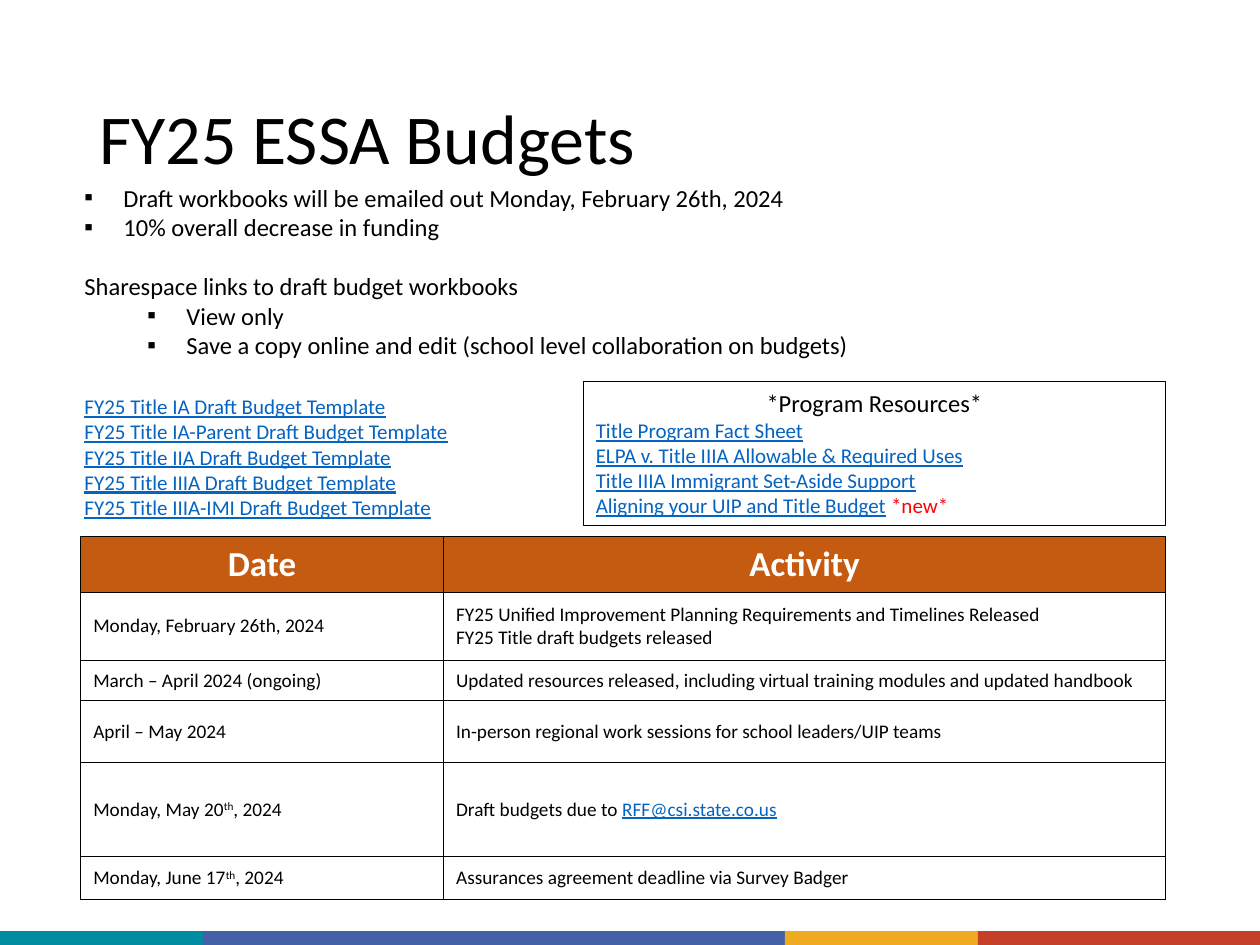
import pptx
import pptx.util
import pptx.dml.color
import pptx.enum.shapes
import pptx.enum.text
import pptx.oxml
import pptx.oxml.ns

Inches, Pt = pptx.util.Inches, pptx.util.Pt
RGB = pptx.dml.color.RGBColor
ALIGN = pptx.enum.text.PP_ALIGN
ANCHOR = pptx.enum.text.MSO_ANCHOR
RECT = pptx.enum.shapes.MSO_SHAPE.RECTANGLE

COLORS = {"text": "000000", "white": "FFFFFF", "link": "0563C1", "new": "FF0000",
          "header": "C55A11", "teal": "008CA0", "indigo": "455FA9",
          "amber": "EFAA1F", "red": "C63F28"}
FONT = "Calibri"

TITLE = "FY25 ESSA Budgets"
# (text, bullet indent in inches or None, space before in points)
NOTES = [
    ("Draft workbooks will be emailed out Monday, February 26th, 2024", 0.31, 0),
    ("10% overall decrease in funding", 0.31, 0),
    ("Sharespace links to draft budget workbooks", None, 17),
    ("View only", 0.81, 0),
    ("Save a copy online and edit (school level collaboration on budgets)", 0.81, 0),
]
TEMPLATES = [f"FY25 Title {name} Draft Budget Template"
             for name in ("IA", "IA-Parent", "IIA", "IIIA", "IIIA-IMI")]
RESOURCES_TITLE = "*Program Resources*"
# A paragraph is a list of (text, style) runs
RESOURCES = [
    [("Title Program Fact Sheet", "link")],
    [("ELPA v. Title IIIA Allowable & Required Uses", "link")],
    [("Title IIIA Immigrant Set-Aside Support", "link")],
    [("Aligning your UIP and Title Budget", "link"), (" ", "text"), ("*new*", "new")],
]
HEADERS = ["Date", "Activity"]
# Each cell is a list of paragraphs
SCHEDULE = [
    ([[("Monday, February 26th, 2024", "text")]],
     [[("FY25 Unified Improvement Planning Requirements and Timelines Released", "text")],
      [("FY25 Title draft budgets released", "text")]]),
    ([[("March – April 2024 (ongoing)", "text")]],
     [[("Updated resources released, including virtual training modules "
        "and updated handbook", "text")]]),
    ([[("April – May 2024", "text")]],
     [[("In-person regional work sessions for school leaders/UIP teams", "text")]]),
    ([[("Monday, May 20", "text"), ("th", "super"), (", 2024", "text")]],
     [[("Draft budgets due to ", "text"), ("RFF@csi.state.co.us", "link")]]),
    ([[("Monday, June 17", "text"), ("th", "super"), (", 2024", "text")]],
     [[("Assurances agreement deadline via Survey Badger", "text")]]),
]
COL_WIDTHS = [2.88, 5.73]
ROW_HEIGHTS = [0.44, 0.54, 0.32, 0.49, 0.75, 0.34]
FOOTER = [("teal", 1.61), ("indigo", 4.62), ("amber", 1.53), ("red", 2.24)]


def place(s, left, top, width, height):
    s.left, s.top, s.width, s.height = map(Inches, (left, top, width, height))


def add_run(p, text, size, style="text", bold=False):
    r = p.add_run()
    r.text = text
    r.font.name, r.font.size, r.font.bold = FONT, Pt(size), bold
    r.font.color.rgb = RGB.from_string(COLORS.get(style, COLORS["text"]))
    if style == "link":
        r.font.underline = True
    if style == "super":
        r._r.get_or_add_rPr().set("baseline", "30000")


def add_paragraph(tf, runs, size, align=ALIGN.LEFT, bold=False):
    """Fill the empty first paragraph, or add one after it."""
    p = tf.paragraphs[0]
    if p.runs:
        p = tf.add_paragraph()
    p.alignment = align
    for text, style in runs:
        add_run(p, text, size, style, bold)
    return p


def format_list(p, indent, before):
    p.line_spacing, p.space_before, p.space_after = 1.0, Pt(before), Pt(0)
    pPr = p._p.get_or_add_pPr()
    pPr.set("marL", str(Inches(indent or 0)))
    pPr.set("indent", str(-Inches(0.31) if indent else 0))
    bullet = ([f'<a:buFont {{}} typeface="{FONT}"/>', '<a:buChar {} char="▪"/>']
              if indent else ["<a:buNone {}/>"])
    for xml in bullet:
        pPr.append(pptx.oxml.parse_xml(xml.format(pptx.oxml.ns.nsdecls("a"))))


def add_borders(cell):
    tcPr = cell._tc.get_or_add_tcPr()
    for side in "LRTB":
        tcPr.append(pptx.oxml.parse_xml(
            f'<a:ln{side} {pptx.oxml.ns.nsdecls("a")} w="12700"><a:solidFill>'
            f'<a:srgbClr val="{COLORS["text"]}"/></a:solidFill></a:ln{side}>'))


def add_rect(slide, left, top, width, height, fill=None):
    s = slide.shapes.add_shape(RECT, *map(Inches, (left, top, width, height)))
    s.shadow.inherit = False
    if fill:
        s.fill.solid()
        s.fill.fore_color.rgb = RGB.from_string(COLORS[fill])
        s.line.fill.background()
    else:
        s.fill.background()
        s.line.color.rgb = RGB.from_string(COLORS["text"])
        s.line.width = Pt(0.75)
    return s


def add_footer(slide):
    left = 0
    for color, width in FOOTER:
        add_rect(slide, left, 7.39, width, 0.11, color)
        left += width


def add_title(slide):
    s = slide.shapes.title
    place(s, 0.69, 0.4, 8.62, 1.45)
    tf = s.text_frame
    tf.auto_size = pptx.enum.text.MSO_AUTO_SIZE.NONE
    tf.vertical_anchor = ANCHOR.MIDDLE
    add_paragraph(tf, [(TITLE, "text")], 40).line_spacing = 0.9


def add_notes(slide):
    s = slide.placeholders[1]
    place(s, 0.57, 1.4, 8.76, 3.26)
    tf = s.text_frame
    tf.auto_size = pptx.enum.text.MSO_AUTO_SIZE.NONE
    for text, indent, before in NOTES:
        p = add_paragraph(tf, [(text, "text")], 14)
        p.level = int(indent == 0.81)
        format_list(p, indent, before)
    for i, text in enumerate(TEMPLATES):
        format_list(add_paragraph(tf, [(text, "link")], 12), None, 0 if i else 19.5)


def add_resources(slide):
    tf = add_rect(slide, 4.63, 3.03, 4.62, 1.14).text_frame
    tf.word_wrap = True
    tf.vertical_anchor = ANCHOR.TOP
    add_paragraph(tf, [(RESOURCES_TITLE, "text")], 14, ALIGN.CENTER)
    for runs in RESOURCES:
        add_paragraph(tf, runs, 12)


def add_schedule(slide):
    rows = [[[[(h, "white")]] for h in HEADERS]] + SCHEDULE
    frame = slide.shapes.add_table(
        len(rows), len(HEADERS), Inches(0.64), Inches(4.26),
        Inches(sum(COL_WIDTHS)), Inches(sum(ROW_HEIGHTS)))
    table = frame.table
    for col, width in zip(table.columns, COL_WIDTHS):
        col.width = Inches(width)
    for i, (row, height, content) in enumerate(zip(table.rows, ROW_HEIGHTS, rows)):
        row.height = Inches(height)
        for cell, paragraphs in zip(row.cells, content):
            cell.vertical_anchor = ANCHOR.MIDDLE
            add_borders(cell)
            if i == 0:
                cell.fill.solid()
                cell.fill.fore_color.rgb = RGB.from_string(COLORS["header"])
            else:
                cell.fill.background()
            for runs in paragraphs:
                add_paragraph(cell.text_frame, runs, 11 if i else 20,
                              ALIGN.LEFT if i else ALIGN.CENTER, i == 0)


def main():
    prs = pptx.Presentation()
    prs.slide_width, prs.slide_height = Inches(10), Inches(7.5)
    slide = prs.slides.add_slide(prs.slide_layouts[1])
    add_footer(slide)
    add_title(slide)
    add_schedule(slide)
    add_notes(slide)
    add_resources(slide)
    prs.save("out.pptx")


if __name__ == "__main__":
    main()
